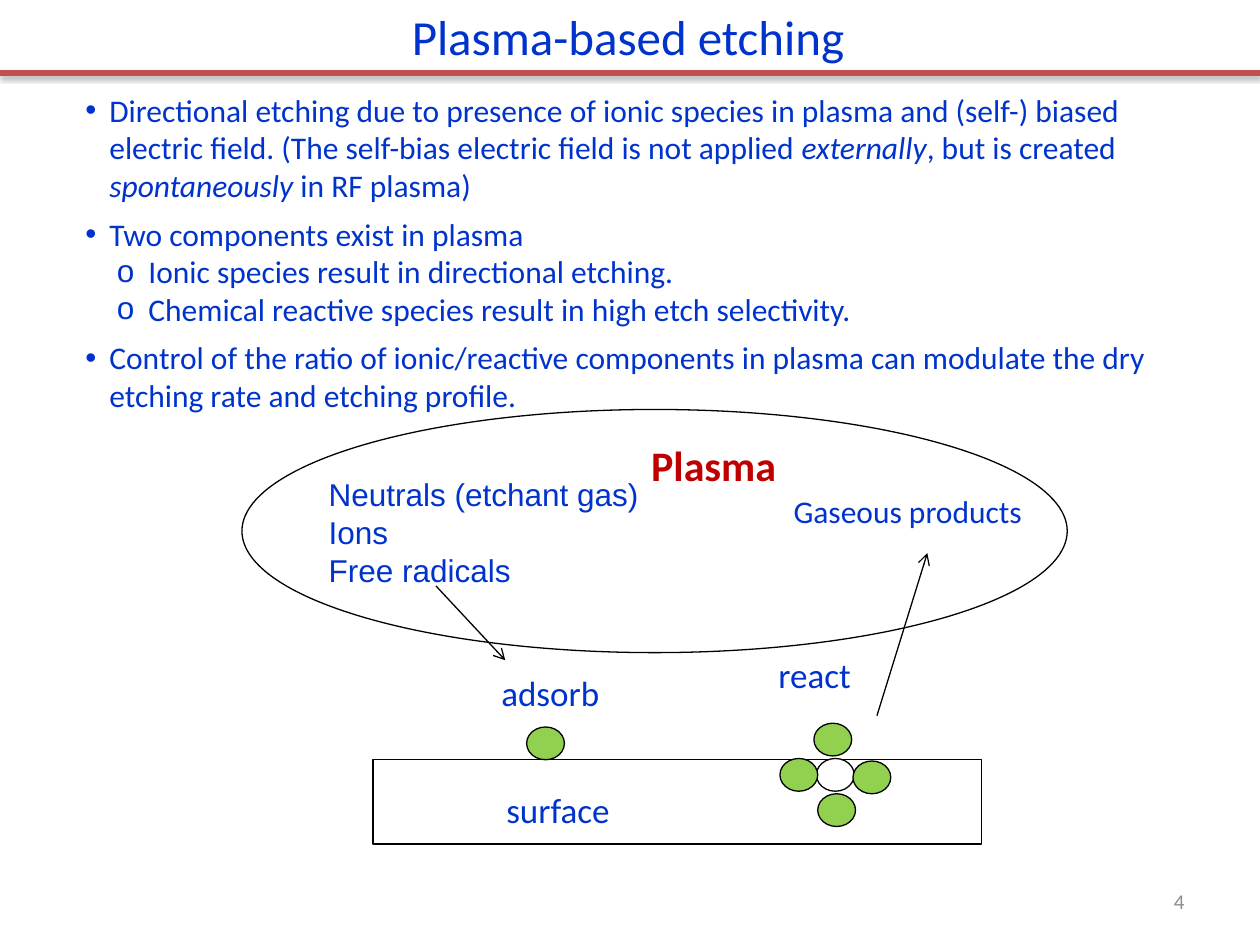
from lxml import etree
from pptx import Presentation
from pptx.dml.color import RGBColor
from pptx.enum.shapes import MSO_CONNECTOR, MSO_SHAPE
from pptx.enum.text import MSO_ANCHOR, MSO_AUTO_SIZE, PP_ALIGN
from pptx.oxml.ns import qn
from pptx.util import Inches, Pt

STRAIGHT = MSO_CONNECTOR.STRAIGHT
OVAL, RECTANGLE = MSO_SHAPE.OVAL, MSO_SHAPE.RECTANGLE
TOP, MIDDLE = MSO_ANCHOR.TOP, MSO_ANCHOR.MIDDLE
LEFT, RIGHT = PP_ALIGN.LEFT, PP_ALIGN.RIGHT
GROW, FIXED = MSO_AUTO_SIZE.SHAPE_TO_FIT_TEXT, MSO_AUTO_SIZE.NONE

COLORS = {
    "text": "0033CC",
    "plasma": "C00000",
    "rule": "C0504D",
    "outline": "000000",
    "etchant": "92D050",
    "substrate": "FFFFFF",
    "number": "8C8C8C",
}


def rgb(name):
    return RGBColor.from_string(COLORS[name])


def add_text(shapes, text, x, y, w, h, size=18, font="Calibri", color="text",
             bold=None, align=LEFT, anchor=TOP, wrap=False, autosize=GROW):
    """Each line is a paragraph; words between asterisks are italic."""
    frame = shapes.add_textbox(Inches(x), Inches(y), Inches(w), Inches(h)).text_frame
    frame.word_wrap = wrap
    frame.auto_size = autosize
    frame.vertical_anchor = anchor
    for i, line in enumerate(text.split("\n")):
        paragraph = frame.add_paragraph() if i else frame.paragraphs[0]
        paragraph.alignment = align
        for j, part in enumerate(line.split("*")):
            run = paragraph.add_run()
            run.text = part
            run.font.size, run.font.name = Pt(size), font
            run.font.bold, run.font.italic = bold, j % 2 == 1
            run.font.color.rgb = rgb(color)
    return frame


def add_bullet(paragraph, char, margin, hanging):
    properties = paragraph._p.get_or_add_pPr()
    properties.set("marL", str(Inches(margin)))
    properties.set("indent", str(-Inches(hanging)))
    etree.SubElement(properties, qn("a:buFont"), typeface="Arial")
    etree.SubElement(properties, qn("a:buChar"), char=char)


def add_line(shapes, x1, y1, x2, y2, color="outline", width=0.75, arrow=False):
    """Returns the effect list, which is empty and so casts no shadow."""
    line = shapes.add_connector(STRAIGHT, Inches(x1), Inches(y1), Inches(x2), Inches(y2))
    line.line.color.rgb = rgb(color)
    line.line.width = Pt(width)
    if arrow:
        etree.SubElement(line.line._get_or_add_ln(), qn("a:tailEnd"), type="arrow")
    return etree.SubElement(line._element.spPr, qn("a:effectLst"))


def add_outlined(shapes, kind, x, y, w, h, fill=None):
    shape = shapes.add_shape(kind, Inches(x), Inches(y), Inches(w), Inches(h))
    shape.shadow.inherit = False
    shape.line.color.rgb = rgb("outline")
    shape.line.width = Pt(0.75)
    if fill:
        shape.fill.solid()
        shape.fill.fore_color.rgb = rgb(fill)
    else:
        shape.fill.background()


def draw_header(shapes, x, y, w):
    effects = add_line(shapes, x, y + 0.58, x + w, y + 0.58, "rule", 3)
    shadow = etree.SubElement(effects, qn("a:outerShdw"), blurRad=str(Pt(3.1)),
                              dist=str(Pt(1.6)), dir="5400000", rotWithShape="0")
    shade = etree.SubElement(shadow, qn("a:srgbClr"), val=COLORS["outline"])
    etree.SubElement(shade, qn("a:alpha"), val="38000")
    add_text(shapes, "Plasma-based etching", x + 3.17, y, 3.67, 0.57, size=28)


def draw_points(shapes, x, y, w, h):
    # Nesting level, space after, wording
    points = [
        (0, 6, "Directional etching due to presence of ionic species in plasma and "
               "(self-) biased electric field. (The self-bias electric field is not "
               "applied *externally*, but is created *spontaneously* in RF plasma)"),
        (0, 0, "Two components exist in plasma"),
        (1, 0, "Ionic species result in directional etching."),
        (1, 6, "Chemical reactive species result in high etch selectivity."),
        (0, 6, "Control of the ratio of ionic/reactive components in plasma can "
               "modulate the dry etching rate and etching profile."),
    ]
    bullets = [("•", 0.19, 0.19), ("o", 0.5, 0.25)]
    text = "\n".join(wording for _, _, wording in points)
    frame = add_text(shapes, text, x, y, w, h, wrap=True)
    for paragraph, (level, after, _) in zip(frame.paragraphs, points):
        paragraph.space_after = Pt(after)
        add_bullet(paragraph, *bullets[level])


def draw_etching(shapes, x, y, w, h):
    # Surface, adsorbed species, and reacted cluster around a substrate atom
    add_outlined(shapes, RECTANGLE, x + 1.04, y + 2.78, 4.83, 0.67)
    atoms = [
        (2.26, 2.52, "etchant"),
        (4.54, 2.49, "etchant"),
        (4.56, 2.77, "substrate"),
        (4.27, 2.77, "etchant"),
        (4.85, 2.79, "etchant"),
        (4.57, 3.05, "etchant"),
    ]
    for dx, dy, species in atoms:
        add_outlined(shapes, OVAL, x + dx, y + dy, 0.3, 0.26, species)

    # Species in the plasma and steps on the surface
    add_text(shapes, "Neutrals (etchant gas)\nIons\nFree radicals",
             x + 0.59, y + 0.47, 2.68, 1.01, font="Arial")
    steps = [("adsorb", 1.96, 2.03, 0.99), ("react", 4.16, 1.89, 0.79),
             ("surface", 2.0, 2.96, 1.03)]
    for step, dx, dy, width in steps:
        add_text(shapes, step, x + dx, y + dy, width, 0.44, size=20)

    # Paths to and from the surface
    for x1, y1, x2, y2 in [(1.54, 1.4, 2.09, 1.99), (5.04, 2.43, 5.44, 1.14)]:
        add_line(shapes, x + x1, y + y1, x + x2, y + y2, arrow=True)

    # Plasma cloud
    add_text(shapes, "Gaseous products", x + 4.28, y + 0.61, 2.16, 0.4, wrap=True)
    add_outlined(shapes, OVAL, x, y, w, h)
    add_text(shapes, "Plasma", x + 3.15, y + 0.19, 1.2, 0.5,
             size=24, color="plasma", bold=True)


def main():
    deck = Presentation()
    deck.slide_width, deck.slide_height = Inches(10), Inches(7.5)
    slide = deck.slides.add_slide(deck.slide_layouts[6])
    draw_header(slide.shapes, 0, 0, 10)
    draw_points(slide.shapes, 0.58, 0.67, 8.83, 2.69)
    draw_etching(slide.shapes.add_group_shape().shapes, 1.92, 3.25, 6.55, 1.93)
    add_text(slide.shapes, "4", 7.17, 6.95, 2.33, 0.4, size=12, color="number",
             align=RIGHT, anchor=MIDDLE, wrap=True, autosize=FIXED)
    deck.save("out.pptx")


if __name__ == "__main__":
    main()
